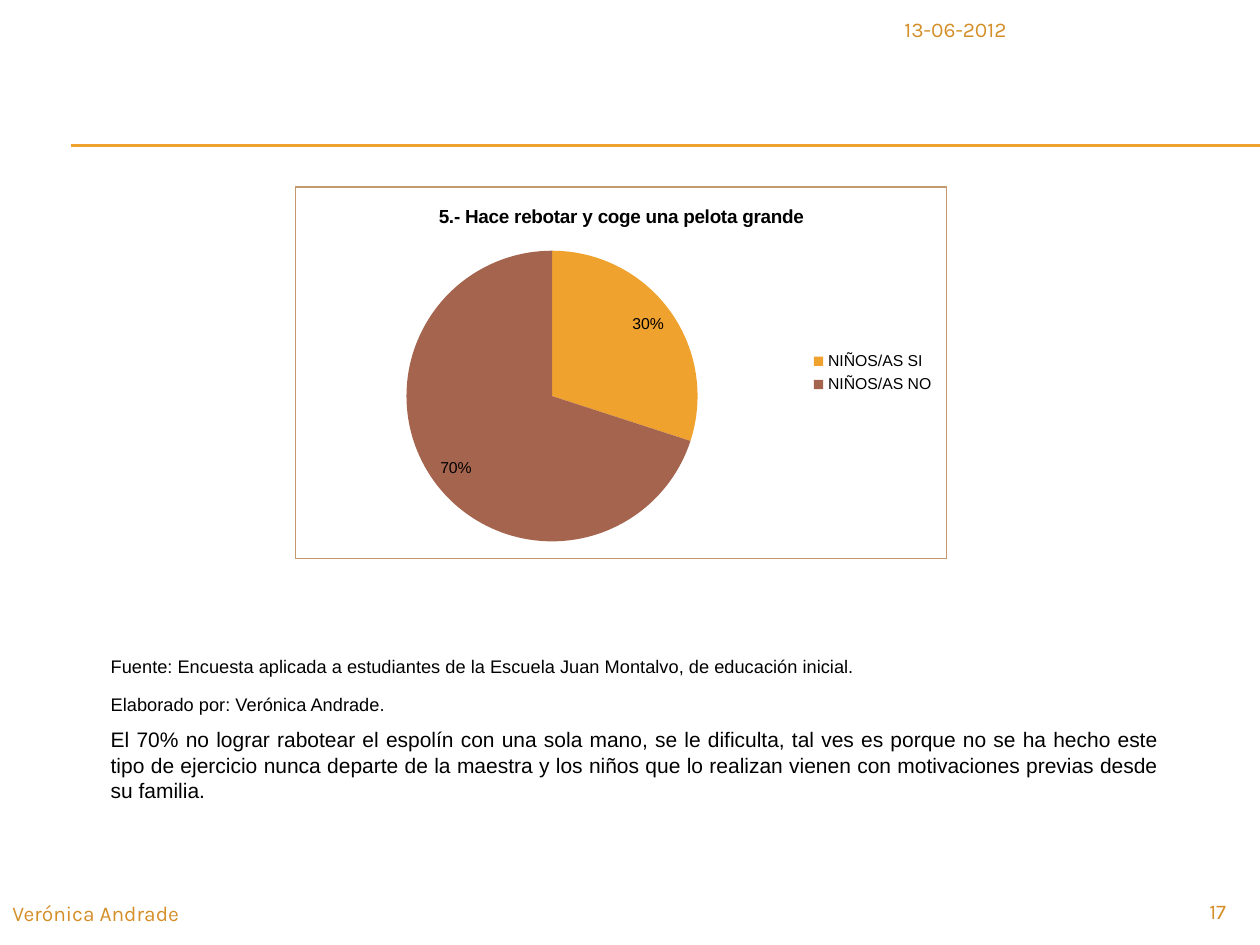
from lxml import etree
from pptx import Presentation
from pptx.chart.data import CategoryChartData
from pptx.dml.color import RGBColor
from pptx.enum.chart import XL_CHART_TYPE, XL_LABEL_POSITION, XL_LEGEND_POSITION
from pptx.enum.shapes import MSO_CONNECTOR
from pptx.enum.text import PP_ALIGN
from pptx.oxml import parse_xml
from pptx.oxml.ns import nsdecls, qn
from pptx.util import Inches, Pt

PIE = XL_CHART_TYPE.PIE
INSIDE_END = XL_LABEL_POSITION.INSIDE_END
LEGEND_RIGHT = XL_LEGEND_POSITION.RIGHT
STRAIGHT = MSO_CONNECTOR.STRAIGHT
LEFT, RIGHT, JUSTIFY = PP_ALIGN.LEFT, PP_ALIGN.RIGHT, PP_ALIGN.JUSTIFY

THEME = {
    "body_font": "Arial", "footer_font": "Karla",
    "black": "000000", "footer": "D48F29", "rule": "F0A22E",
    "yes": "F0A22E", "no": "A5644E", "border": "C3986D",
    "footer_size": 12, "source_size": 18, "body_size": 12,
    "chart_size": 9, "chart_title_size": 10.8,
}


def rgb(name):
    return RGBColor.from_string(THEME[name])


def add_text(tf, text, size="body_size", font="body_font", color="black",
             align=LEFT, baseline=None, first=False):
    """Add one formatted paragraph to a text frame."""
    tf.word_wrap = True
    p = tf.paragraphs[0] if first else tf.add_paragraph()
    p.alignment = align
    r = p.add_run()
    r.text = text
    r.font.size = Pt(THEME[size])
    r.font.name = THEME[font]
    r.font.color.rgb = rgb(color)
    if baseline:
        r.font._element.set("baseline", str(baseline))


prs = Presentation()
prs.slide_width, prs.slide_height = Inches(10), Inches(7.5)
s = prs.slides.add_slide(prs.slide_layouts[6])

# Double rule under the header
for y in (1.15, 1.16):
    rule = s.shapes.add_connector(STRAIGHT, Inches(0.56), Inches(y), Inches(10), Inches(y))
    rule.line.color.rgb = rgb("rule")
    rule.line.width = Pt(0.75)
    etree.SubElement(rule._element.spPr, qn("a:effectLst"))

# Date, author and page number
for text, box, align in (
    ("13-06-2012", (7.08, 0.08, 2.75, 0.32), LEFT),
    ("Verónica Andrade", (0, 7.1, 6.08, 0.4), LEFT),
    ("17", (9, 7.08, 0.83, 0.27), RIGHT),
):
    tb = s.shapes.add_textbox(*map(Inches, box))
    add_text(tb.text_frame, text, size="footer_size", font="footer_font",
             color="footer", align=align, first=True)

# Survey pie chart
data = CategoryChartData(number_format="0")
data.categories = ["NIÑOS/AS SI", "NIÑOS/AS NO"]
data.add_series("Series 1", (30, 70))
chart = s.shapes.add_chart(PIE, Inches(2.34), Inches(1.48), Inches(5.18), Inches(2.96), data).chart
chart.font.size = Pt(THEME["chart_size"])
chart.font.name = THEME["body_font"]
chart.font.color.rgb = rgb("black")

chart.has_title = True
add_text(chart.chart_title.text_frame, "5.- Hace rebotar y coge una pelota grande",
         size="chart_title_size", align=None, first=True)
chart.chart_title.text_frame.paragraphs[0].runs[0].font.bold = True
chart.chart_title.include_in_layout = False

chart.has_legend = True
chart.legend.position = LEGEND_RIGHT
chart.legend.include_in_layout = False

plot = chart.plots[0]
plot.vary_by_categories = True
for i, color in enumerate(("yes", "no")):
    fill = plot.series[0].points[i].format.fill
    fill.solid()
    fill.fore_color.rgb = rgb(color)

plot.has_data_labels = True
labels = plot.data_labels
labels.show_percentage = True
labels.show_value = False
labels.number_format = "0%"
labels.number_format_is_linked = False
labels.position = INSIDE_END

border = parse_xml(
    f'<c:spPr {nsdecls("c", "a")}><a:noFill/><a:ln w="{Pt(0.75)}"><a:solidFill>'
    f'<a:srgbClr val="{THEME["border"]}"/></a:solidFill></a:ln></c:spPr>')
chart._chartSpace.find(qn("c:chart")).addnext(border)

# Source and interpretation
tf = s.shapes.add_textbox(Inches(0.78), Inches(5.12), Inches(8.52), Inches(1.3)).text_frame
add_text(tf, "Fuente: Encuesta aplicada a estudiantes de la Escuela Juan Montalvo, de educación inicial.",
         size="source_size", align=JUSTIFY, baseline=30000, first=True)
add_text(tf, "Elaborado por: Verónica Andrade.",
         size="source_size", align=JUSTIFY, baseline=30000)
add_text(tf, "El 70% no lograr rabotear el espolín con una sola mano, se le dificulta, tal ves es porque "
             "no se ha hecho este tipo de ejercicio nunca departe de la maestra y los niños que lo "
             "realizan vienen con motivaciones previas desde su familia.", align=JUSTIFY)

prs.save("out.pptx")
